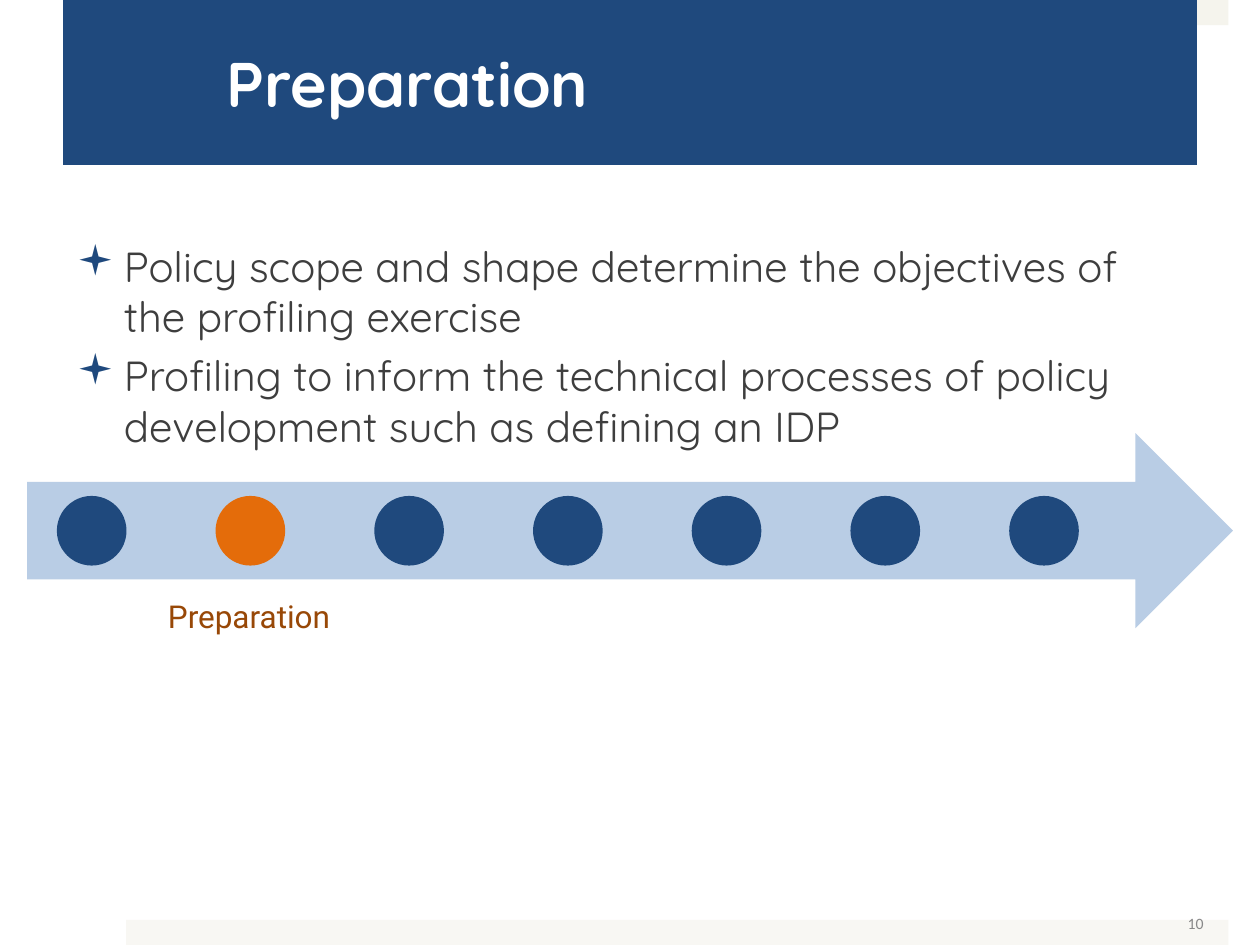
from dataclasses import dataclass
from lxml.etree import SubElement
from pptx import Presentation
from pptx.dml.color import RGBColor
from pptx.enum.shapes import MSO_SHAPE as Preset
from pptx.enum.text import MSO_ANCHOR as Anchor, PP_ALIGN as Align
from pptx.oxml.ns import qn
from pptx.util import Pt


@dataclass(frozen=True)
class Theme:
    navy: str = "1F497D"
    orange: str = "E46C0A"
    brown: str = "984807"
    sky: str = "B9CDE5"
    top_band: str = "F5F4ED"
    bottom_band: str = "F8F7F3"
    white: str = "FFFFFF"
    ink: str = "3E3E3E"
    grey: str = "898989"
    heading_font: str = "Quicksand"
    label_font: str = "Roboto"
    number_font: str = "Calibri"
    title_size: float = 36
    body_size: float = 24
    label_size: float = 18
    number_size: float = 9


THEME = Theme()
STAGES = 7
CURRENT_STAGE = 1
POINTS = [
    "Policy scope and shape determine the objectives of the profiling exercise",
    "Profiling to inform the technical processes of policy development such as defining an IDP",
]


def place(shape, left, top, width, height):
    shape.left, shape.top = Pt(left), Pt(top)
    shape.width, shape.height = Pt(width), Pt(height)


def fill_with(shape, color):
    shape.fill.solid()
    shape.fill.fore_color.rgb = RGBColor.from_string(color)


def add_block(shapes, preset, box, color):
    block = shapes.add_shape(preset, *map(Pt, box))
    block.shadow.inherit = False
    fill_with(block, color)
    block.line.fill.background()


def add_bullet(paragraph, indent):
    properties = paragraph._p.get_or_add_pPr()
    properties.set("marL", str(Pt(indent)))
    properties.set("indent", str(-Pt(indent)))
    bullet_color = SubElement(properties, qn("a:buClr"))
    SubElement(bullet_color, qn("a:srgbClr"), val=THEME.navy)
    SubElement(properties, qn("a:buFont"), typeface="Wingdings")
    SubElement(properties, qn("a:buChar"), char="▪")


def write(frame, *texts, font, size, color, bold=False, align=Align.LEFT,
          anchor=Anchor.TOP, insets=(7.2, 3.6, 7.2, 3.6), bullet_indent=None, gap=0):
    frame.word_wrap = True
    frame.vertical_anchor = anchor
    (frame.margin_left, frame.margin_top,
     frame.margin_right, frame.margin_bottom) = map(Pt, insets)
    for index, text in enumerate(texts):
        paragraph = frame.add_paragraph() if index else frame.paragraphs[0]
        if bullet_indent:
            add_bullet(paragraph, bullet_indent)
        paragraph.alignment = align
        paragraph.space_before = Pt(gap if index else 0)
        run = paragraph.add_run()
        run.text = text
        run.font.name, run.font.size, run.font.bold = font, Pt(size), bold
        run.font.color.rgb = RGBColor.from_string(color)


def add_text(slide, box, *texts, **style):
    write(slide.shapes.add_textbox(*map(Pt, box)).text_frame, *texts, **style)


def add_title(slide, text):
    title = slide.shapes.title
    slide.shapes._spTree.append(title._element)
    place(title, 36, 0, 648, 94.3)
    fill_with(title, THEME.navy)
    write(title.text_frame, text, font=THEME.heading_font, size=THEME.title_size,
          color=THEME.white, bold=True, anchor=Anchor.MIDDLE,
          insets=(93.6, 3.6, 21.6, 3.6))


def add_timeline(slide):
    timeline = slide.shapes.add_group_shape().shapes
    add_block(timeline, Preset.RIGHT_ARROW, (15.6, 247.5, 689, 111.4), THEME.sky)
    for stage in range(STAGES):
        color = THEME.orange if stage == CURRENT_STAGE else THEME.navy
        add_block(timeline, Preset.OVAL, (32.5 + 90.7 * stage, 283.4, 39.8, 39.8), color)


def main():
    deck = Presentation()
    deck.slide_width, deck.slide_height = Pt(720), Pt(540)
    slide = deck.slides.add_slide(deck.slide_layouts[5])

    add_block(slide.shapes, Preset.RECTANGLE, (72, 0, 630, 14.4), THEME.top_band)
    add_block(slide.shapes, Preset.RECTANGLE, (72, 525.6, 630, 14.4), THEME.bottom_band)
    add_text(slide, (525, 512.9, 167.8, 28.8), "10", font=THEME.number_font,
             size=THEME.number_size, color=THEME.grey, align=Align.RIGHT,
             anchor=Anchor.MIDDLE, insets=(5, 2.9, 5, 2.9))
    add_title(slide, "Preparation")
    add_timeline(slide)
    add_text(slide, (87.8, 337.7, 108, 29), "Preparation", font=THEME.label_font,
             size=THEME.label_size, color=THEME.brown, align=Align.RIGHT)
    add_text(slide, (36.7, 133.9, 611.3, 243.4), *POINTS, font=THEME.heading_font,
             size=THEME.body_size, color=THEME.ink, bullet_indent=27, gap=4.8)

    deck.save("out.pptx")


if __name__ == "__main__":
    main()
